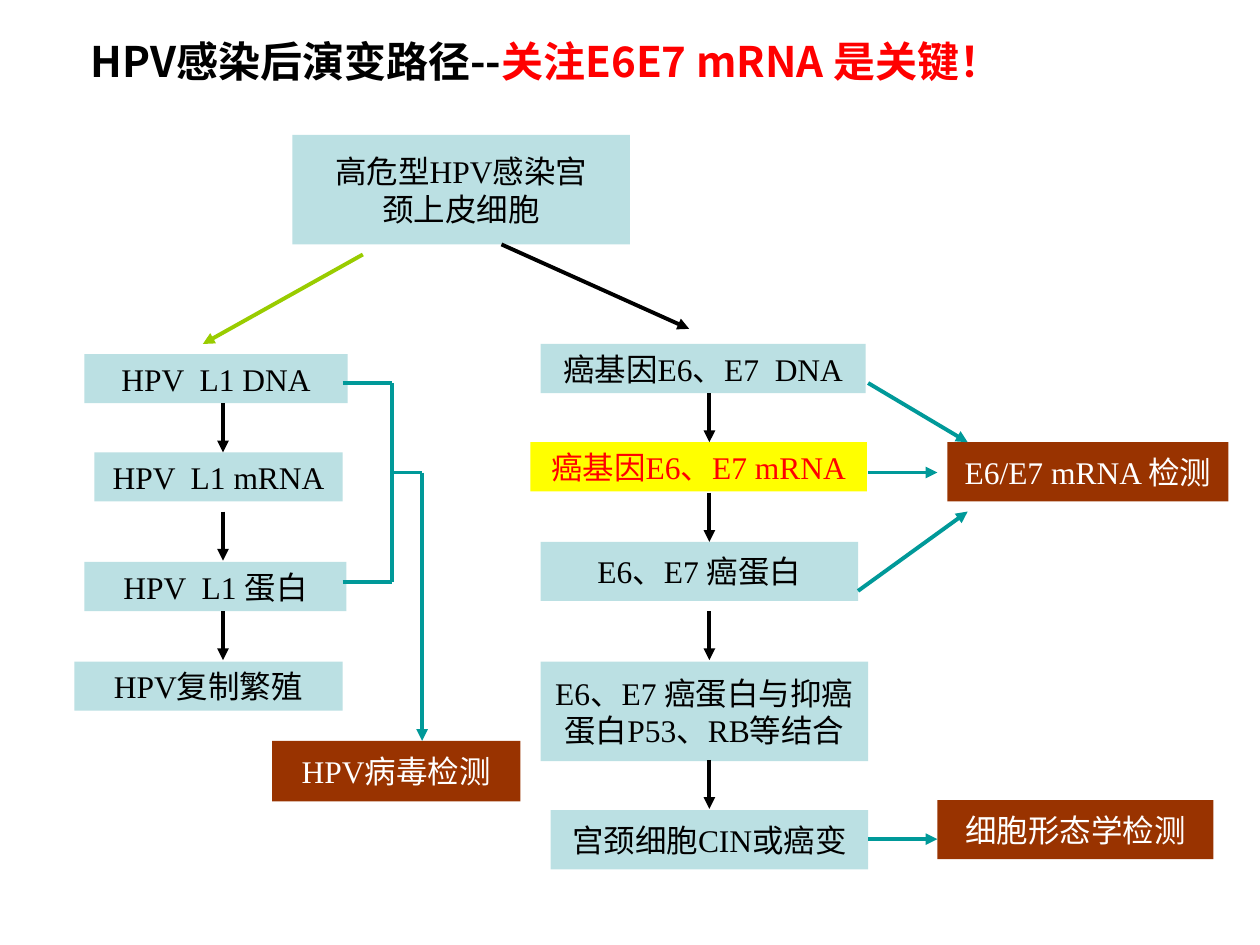
from pptx import Presentation
from pptx.dml.color import RGBColor
from pptx.enum.shapes import MSO_CONNECTOR, MSO_SHAPE
from pptx.enum.text import MSO_ANCHOR, PP_ALIGN
from pptx.oxml.ns import qn
from pptx.util import Inches, Pt
from lxml import etree

RECT, LINE = MSO_SHAPE.RECTANGLE, MSO_CONNECTOR.STRAIGHT
MIDDLE, CENTER = MSO_ANCHOR.MIDDLE, PP_ALIGN.CENTER
BLACK = RGBColor(0x00, 0x00, 0x00)
WHITE = RGBColor(0xFF, 0xFF, 0xFF)
RED = RGBColor(0xFF, 0x00, 0x00)
YELLOW = RGBColor(0xFF, 0xFF, 0x00)
PALE = RGBColor(0xBB, 0xE0, 0xE3)
BROWN = RGBColor(0x99, 0x33, 0x00)
TEAL = RGBColor(0x00, 0x99, 0x99)
GREEN = RGBColor(0x99, 0xCC, 0x00)
SERIF, SANS = "Times New Roman", "Noto Sans CJK SC"

TITLE = [("HPV感染后演变路径--", BLACK), ("关注E6E7 mRNA 是关键！", RED)]

# Boxes by role: (fill, text colour, [(text, left, top, width, height)])
GROUPS = [
    (PALE, BLACK, [
        ("高危型HPV感染宫\n颈上皮细胞", 2.32, 1.07, 2.68, 0.87),
        # virus branch
        ("HPV  L1 DNA", 0.67, 2.81, 2.09, 0.39),
        ("HPV  L1 mRNA", 0.75, 3.59, 1.97, 0.39),
        ("HPV  L1 蛋白", 0.67, 4.46, 2.08, 0.39),
        ("HPV复制繁殖", 0.59, 5.25, 2.13, 0.39),
        # cancer branch
        ("癌基因E6、E7  DNA", 4.29, 2.73, 2.58, 0.39),
        ("E6、E7 癌蛋白", 4.29, 4.3, 2.52, 0.47),
        ("E6、E7 癌蛋白与抑癌\n蛋白P53、RB等结合", 4.29, 5.25, 2.6, 0.79),
        ("宫颈细胞CIN或癌变", 4.37, 6.43, 2.52, 0.47),
    ]),
    (YELLOW, RED, [("癌基因E6、E7 mRNA", 4.21, 3.51, 2.67, 0.39)]),
    (BROWN, WHITE, [
        ("HPV病毒检测", 2.16, 5.88, 1.97, 0.48),
        ("E6/E7 mRNA 检测", 7.52, 3.51, 2.23, 0.47),
        ("细胞形态学检测", 7.44, 6.35, 2.19, 0.47),
    ]),
]

# Downward steps: x of each branch and the tops of its arrows
STEP = 0.39
STEPS = {1.77: (3.2, 4.06, 4.85), 5.63: (3.12, 3.91, 4.85, 6.03)}

# Other lines: (x1, y1, x2, y2)
ARROWS = [
    (GREEN, [(2.88, 2.02, 1.61, 2.73)]),
    (BLACK, [(3.98, 1.94, 5.47, 2.61)]),
    (BLACK, [(x, y, x, y + STEP) for x, tops in STEPS.items() for y in tops]),
    (TEAL, [
        (6.89, 3.04, 7.68, 3.51),
        (6.89, 3.75, 7.44, 3.75),
        (6.81, 4.69, 7.68, 4.06),
        (6.89, 6.66, 7.44, 6.66),
        (3.35, 3.75, 3.35, 5.88),
    ]),
]
BRACKET = [
    (2.72, 3.04, 3.11, 3.04),
    (3.11, 3.04, 3.11, 4.62),
    (2.72, 4.62, 3.11, 4.62),
    (3.11, 3.75, 3.35, 3.75),
]


def set_font(font, name, size, color, bold=False):
    font.name, font.size, font.bold = name, Pt(size), bold
    font.color.rgb = color


def clear_pad(frame):
    frame.margin_left = frame.margin_right = 0
    frame.margin_top = frame.margin_bottom = 0


def add_box(slide, text, place, fill, color):
    box = slide.shapes.add_shape(RECT, *map(Inches, place))
    box.shadow.inherit = False
    box.fill.solid()
    box.fill.fore_color.rgb = fill
    box.line.fill.background()
    frame = box.text_frame
    clear_pad(frame)
    frame.word_wrap = False
    frame.vertical_anchor = MIDDLE
    frame.text = text
    for para in frame.paragraphs:
        para.alignment = CENTER
        set_font(para.font, SERIF, 18, color)


def add_line(slide, ends, color, arrow=True):
    line = slide.shapes.add_connector(LINE, *map(Inches, ends))
    line.line.color.rgb = color
    line.line.width = Pt(2.25)
    if arrow:
        etree.SubElement(line.line._get_or_add_ln(), qn("a:tailEnd"), type="triangle")
    etree.SubElement(line._element.spPr, qn("a:effectLst"))


def add_title(slide):
    box = slide.shapes.add_textbox(*map(Inches, (0.62, 0.23, 7.71, 0.5)))
    box.text_frame.word_wrap = False
    para = box.text_frame.paragraphs[0]
    for text, color in TITLE:
        run = para.add_run()
        run.text = text
        set_font(run.font, SANS, 24, color, True)


def main():
    prs = Presentation()
    prs.slide_width, prs.slide_height = Inches(10), Inches(7.5)
    slide = prs.slides.add_slide(prs.slide_layouts[6])

    add_title(slide)
    for fill, color, boxes in GROUPS:
        for text, *place in boxes:
            add_box(slide, text, place, fill, color)
    for color, lines in ARROWS:
        for ends in lines:
            add_line(slide, ends, color)
    for ends in BRACKET:
        add_line(slide, ends, TEAL, arrow=False)

    prs.save("out.pptx")


if __name__ == "__main__":
    main()
